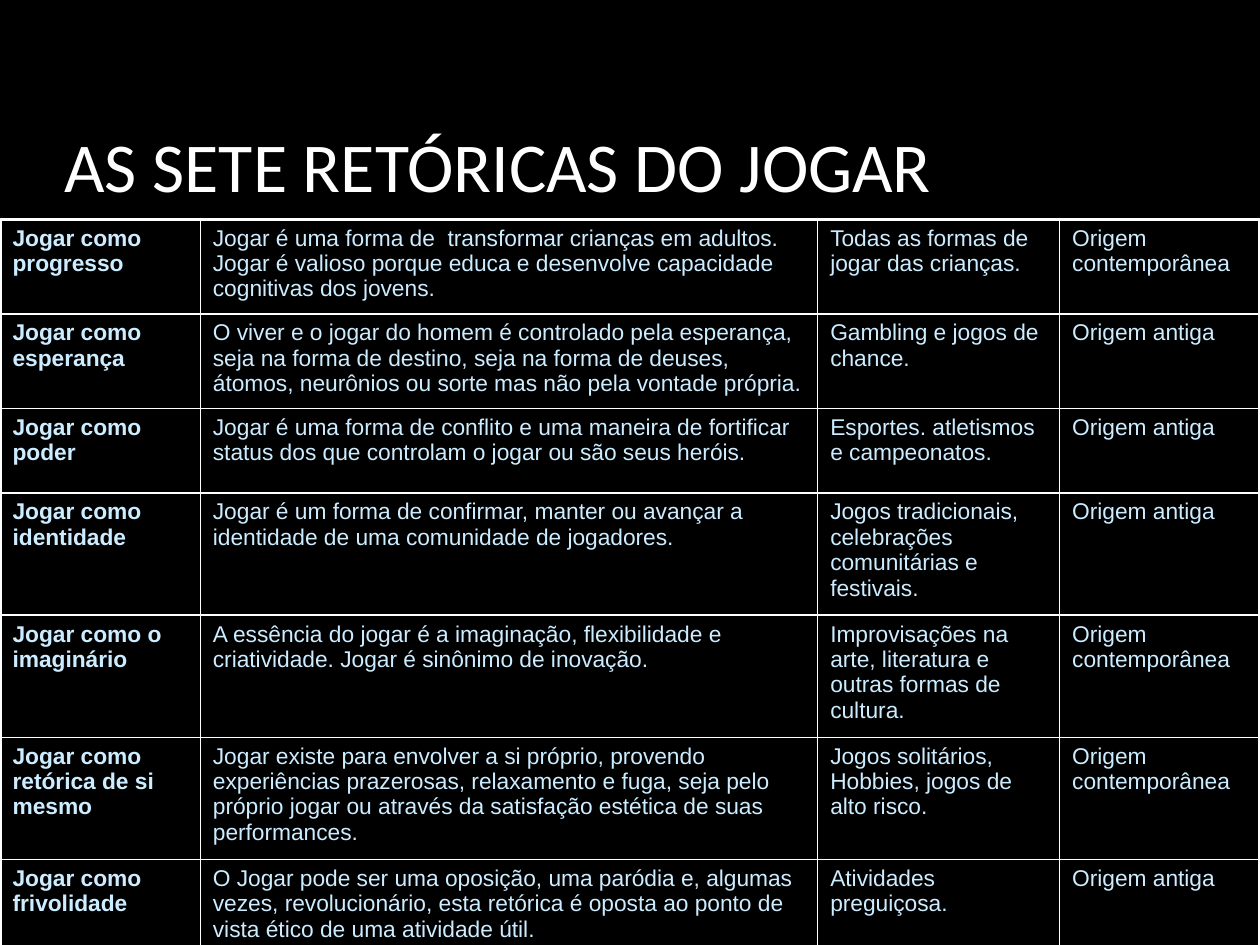
from dataclasses import dataclass

from lxml.etree import SubElement
from pptx import Presentation
from pptx.dml.color import RGBColor as Color
from pptx.enum.text import MSO_ANCHOR as Anchor
from pptx.oxml.ns import qn
from pptx.util import Inches, Pt

TITLE = "AS SETE RETÓRICAS DO JOGAR"
RHETORICS = [
    ("Jogar como progresso",
     "Jogar é uma forma de  transformar crianças em adultos. Jogar é valioso porque "
     "educa e desenvolve capacidade cognitivas dos jovens.",
     "Todas as formas de jogar das crianças.", "Origem contemporânea"),
    ("Jogar como esperança",
     "O viver e o jogar do homem é controlado pela esperança, seja na forma de destino, "
     "seja na forma de deuses, átomos, neurônios ou sorte mas não pela vontade própria.",
     "Gambling e jogos de chance.", "Origem antiga"),
    ("Jogar como poder",
     "Jogar é uma forma de conflito e uma maneira de fortificar status dos que "
     "controlam o jogar ou são seus heróis.",
     "Esportes. atletismos e campeonatos.", "Origem antiga"),
    ("Jogar como identidade",
     "Jogar é um forma de confirmar, manter ou avançar a identidade de uma comunidade "
     "de jogadores.",
     "Jogos tradicionais, celebrações comunitárias e festivais.", "Origem antiga"),
    ("Jogar como o imaginário",
     "A essência do jogar é a imaginação, flexibilidade e criatividade. Jogar é "
     "sinônimo de inovação.",
     "Improvisações na arte, literatura e outras formas de cultura.",
     "Origem contemporânea"),
    ("Jogar como retórica de si mesmo",
     "Jogar existe para envolver a si próprio, provendo experiências prazerosas, "
     "relaxamento e fuga, seja pelo próprio jogar ou através da satisfação estética de "
     "suas performances.",
     "Jogos solitários, Hobbies, jogos de alto risco.", "Origem contemporânea"),
    ("Jogar como frivolidade",
     "O Jogar pode ser uma oposição, uma paródia e, algumas vezes, revolucionário, esta "
     "retórica é oposta ao ponto de vista ético de uma atividade útil.",
     "Atividades preguiçosa.", "Origem antiga"),
]
COLUMN_WIDTHS = [1.59, 4.9, 1.92, 1.59]
ROW_HEIGHTS = [0.75, 0.75, 0.67, 0.97, 0.97, 0.97, 0.79]
TABLE_TOP = 1.74


@dataclass(frozen=True)
class Theme:
    background: str = "000000"
    title: str = "FFFFFF"
    body: str = "CCECFF"
    border: str = "FFFFFF"
    title_font: str = "Calibri"
    body_font: str = "Arial"
    title_size: float = 40
    body_size: float = 13
    outer_line: float = 2.25
    inner_line: float = 1


THEME = Theme()


def add_span(para, text, font, size, color, bold=False):
    span = para.add_run()
    span.text = text
    span.font.name = font
    span.font.size = Pt(size)
    span.font.bold = bold
    span.font.color.rgb = Color.from_string(color)


def set_borders(cell, outer_edges):
    """Draw all four edges, thicker where they lie on the table's outline."""
    properties = cell._tc.get_or_add_tcPr()
    for position, (edge, is_outer) in enumerate(outer_edges.items()):
        width = THEME.outer_line if is_outer else THEME.inner_line
        line = properties.makeelement(qn(f"a:ln{edge}"), {"w": str(Pt(width))})
        fill = SubElement(line, qn("a:solidFill"))
        SubElement(fill, qn("a:srgbClr"), val=THEME.border)
        properties.insert(position, line)


def add_title(page):
    box = page.shapes.add_textbox(Inches(0.51), Inches(0.91), Inches(8.99), Inches(0.79))
    frame = box.text_frame
    frame.word_wrap = True
    frame.vertical_anchor = Anchor.MIDDLE
    frame.margin_left = frame.margin_right = 0
    add_span(frame.paragraphs[0], TITLE, THEME.title_font, THEME.title_size, THEME.title)


def add_rhetorics_table(page):
    last_row, last_column = len(RHETORICS) - 1, len(COLUMN_WIDTHS) - 1
    table = page.shapes.add_table(
        len(RHETORICS), len(COLUMN_WIDTHS), 0, Inches(TABLE_TOP),
        Inches(sum(COLUMN_WIDTHS)), Inches(sum(ROW_HEIGHTS))).table
    table.first_row = table.horz_banding = False
    for column, width in zip(table.columns, COLUMN_WIDTHS):
        column.width = Inches(width)
    for row, height in zip(table.rows, ROW_HEIGHTS):
        row.height = Inches(height)
    for r, texts in enumerate(RHETORICS):
        for c, text in enumerate(texts):
            cell = table.cell(r, c)
            cell.fill.background()
            set_borders(cell, {"L": c == 0, "R": c == last_column,
                               "T": r == 0, "B": r == last_row})
            add_span(cell.text_frame.paragraphs[0], text, THEME.body_font,
                     THEME.body_size, THEME.body, bold=c == 0)


def main():
    deck = Presentation()
    deck.slide_width, deck.slide_height = Inches(10), Inches(7.5)
    page = deck.slides.add_slide(deck.slide_layouts[6])
    page.background.fill.solid()
    page.background.fill.fore_color.rgb = Color.from_string(THEME.background)
    add_title(page)
    add_rhetorics_table(page)
    deck.save("out.pptx")


if __name__ == "__main__":
    main()
